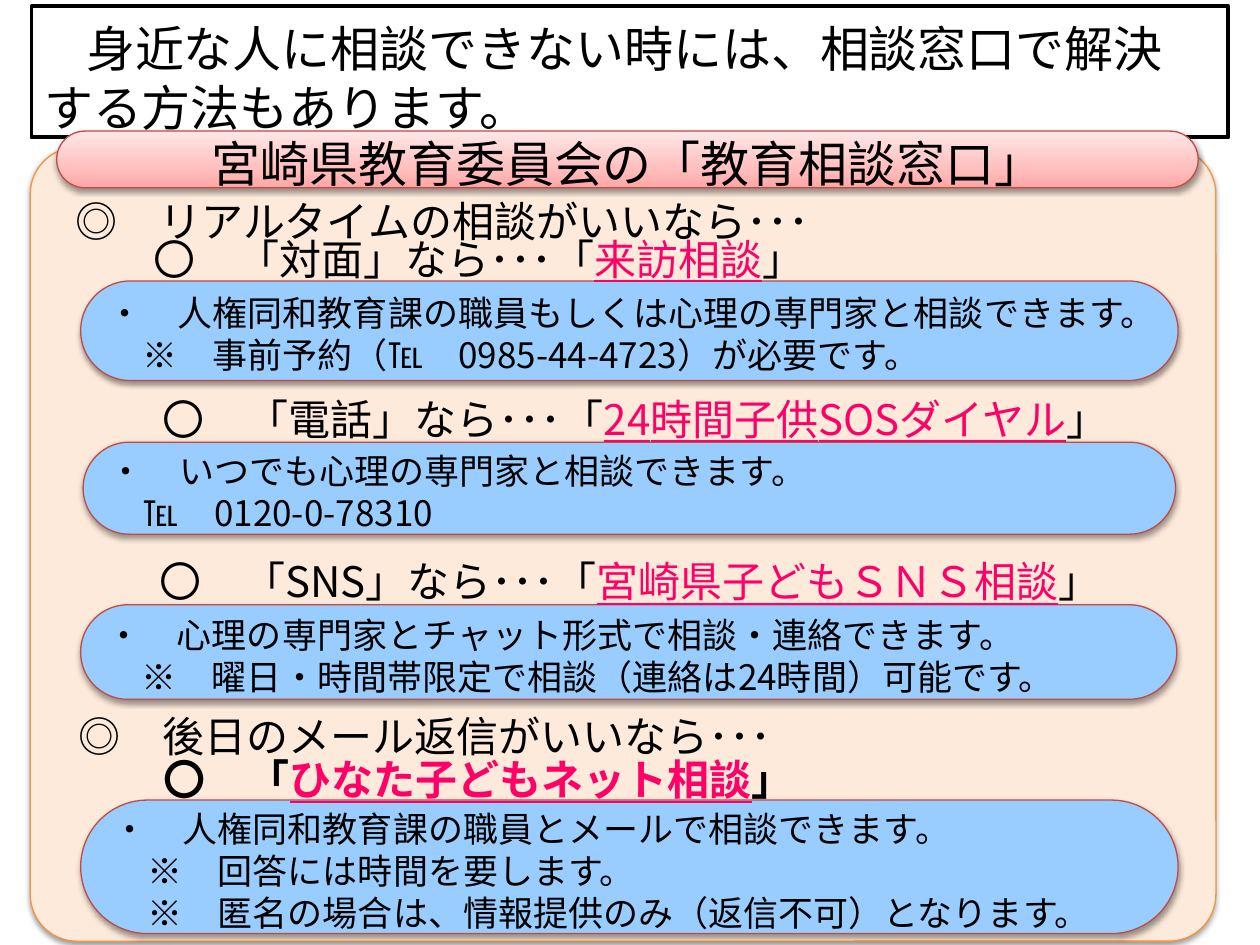
"""Build a slide listing the education counselling contacts."""
from copy import deepcopy

from lxml import etree
from pptx import Presentation
from pptx import util as u
from pptx.dml.color import RGBColor
from pptx.enum import shapes, text
from pptx.oxml.ns import qn

PX = 9144
FONT = "Noto Sans CJK JP"
INK, PINK, BLUE, CREAM = "000000", "FF0066", "99CCFF", "FDEADA"
RED_LINE, ORANGE_LINE = "BF4C48", "F69240"
BANNER_STOPS = [(0, "FFA6A5"), (0.35, "FFC0BF"), (1, "FFE7E7")]

LEAD = "身近な人に相談できない時には、相談窓口で解決　する方法もあります。"
BANNER = "宮崎県教育委員会の「教育相談窓口」"
HEADINGS = [
    ((-28, 147, 758), "◎　リアルタイムの相談がいいなら･･･"),
    ((0, 556, 674), "◎　後日のメール返信がいいなら･･･"),
]
CONTACTS = [
    ((-54, 177, 868), "〇　「対面」なら･･･「", "来訪相談", False),
    ((40, 304, 929), "〇　「電話」なら･･･「", "24時間子供SOSダイヤル", False),
    ((38, 433, 924), "〇　「SNS」なら･･･「", "宮崎県子どもＳＮＳ相談", False),
    ((-54, 590, 868), "〇　「", "ひなた子どもネット相談", True),
]
DETAILS = [
    ((64, 223, 871, 79), ["・　人権同和教育課の職員もしくは心理の専門家と相談できます。",
                          "　※　事前予約（℡　0985-44-4723）が必要です。"]),
    ((66, 351, 867, 73), ["・　いつでも心理の専門家と相談できます。",
                          "　℡　0120-0-78310"]),
    ((64, 480, 870, 75), ["・　心理の専門家とチャット形式で相談・連絡できます。",
                          "　※　曜日・時間帯限定で相談（連絡は24時間）可能です。"]),
    ((64, 635, 871, 106), ["・　人権同和教育課の職員とメールで相談できます。",
                           "　※　回答には時間を要します。",
                           "　※　匿名の場合は、情報提供のみ（返信不可）となります。"]),
]


def rgb(value):
    return RGBColor.from_string(value)


def px(values):
    return [u.Emu(value * PX) for value in values]


def outline(shape, color, width):
    shape.line.color.rgb = rgb(color)
    shape.line.width = u.Pt(width)


def write(shape, lines, size, align="LEFT", anchor="TOP", top=10, bold=False):
    """Fill a shape with lines, each a list of (text, format) runs."""
    frame = shape.text_frame
    frame.word_wrap = True
    frame.auto_size = text.MSO_AUTO_SIZE.NONE
    frame.vertical_anchor = text.MSO_ANCHOR[anchor]
    frame.margin_left = frame.margin_right = 10 * PX
    frame.margin_top, frame.margin_bottom = px((top, 5))
    for index, runs in enumerate(lines):
        paragraph = frame.add_paragraph() if index else frame.paragraphs[0]
        paragraph.alignment = text.PP_ALIGN[align]
        paragraph.line_spacing = u.Pt(round(size * 1.2, 1))
        paragraph.space_before = paragraph.space_after = u.Pt(0)
        for words, style in runs:
            run = paragraph.add_run()
            run.text = words
            font = run.font
            font.size = u.Pt(style.get("size", size))
            font.bold = bold
            font.underline = style.get("underline", False)
            font.color.rgb = rgb(style.get("color", INK))
            font.name = FONT
            east_asian = etree.SubElement(run._r.get_or_add_rPr(), qn("a:ea"))
            east_asian.set("typeface", FONT)


def panel(slide, place, line, fill=None, roundness=0.5):
    """Add a rounded rectangle with a soft shadow below it."""
    shape = slide.shapes.add_shape(shapes.MSO_SHAPE.ROUNDED_RECTANGLE, *px(place))
    shape.adjustments[0] = roundness
    if fill:
        shape.fill.solid()
        shape.fill.fore_color.rgb = rgb(fill)
    outline(shape, line, 0.75)
    shape.shadow.inherit = False
    effects = shape.element.spPr.find(qn("a:effectLst"))
    shadow = etree.SubElement(effects, qn("a:outerShdw"), blurRad="40000",
                              dist="20000", dir="5400000", rotWithShape="0")
    color = etree.SubElement(shadow, qn("a:srgbClr"), val=INK)
    etree.SubElement(color, qn("a:alpha"), val="38000")
    return shape


def shade(shape, stops):
    """Give a shape a vertical gradient that starts at the bottom."""
    shape.fill.gradient()
    shape.fill.gradient_angle = 90
    stop_list = shape.element.spPr.find(".//" + qn("a:gsLst"))
    stop_list.append(deepcopy(stop_list[0]))
    for stop, (position, color) in zip(shape.fill.gradient_stops, stops):
        stop.position = position
        stop.color.rgb = rgb(color)


def label(slide, place, runs, bold=False):
    box = slide.shapes.add_textbox(*px((*place, 50)))
    write(box, [runs], 24, align="CENTER", top=8, bold=bold)


def main():
    deck = Presentation()
    deck.slide_width, deck.slide_height = px((1000, 750))
    slide = deck.slides.add_slide(deck.slide_layouts[5])

    lead = slide.shapes.title
    lead.left, lead.top, lead.width, lead.height = px((25, 5, 950, 104))
    outline(lead, INK, 2.25)
    write(lead, [[("　", {"size": 24}), (LEAD, {})]], 28)

    panel(slide, (24, 117, 941, 630), ORANGE_LINE, CREAM, 0.059)
    banner = panel(slide, (45, 104, 906, 45), RED_LINE)
    shade(banner, BANNER_STOPS)
    write(banner, [[(BANNER, {})]], 28, align="CENTER", anchor="MIDDLE")

    for place, lines in DETAILS:
        write(panel(slide, place, RED_LINE, BLUE),
              [[(line, {})] for line in lines], 20, anchor="MIDDLE")
    for place, heading in HEADINGS:
        label(slide, place, [(heading, {})])
    for place, opening, service, bold in CONTACTS:
        accent = {"color": PINK, "underline": True}
        label(slide, place, [(opening, {}), (service, accent), ("」", {})], bold)

    deck.save("out.pptx")


if __name__ == "__main__":
    main()
